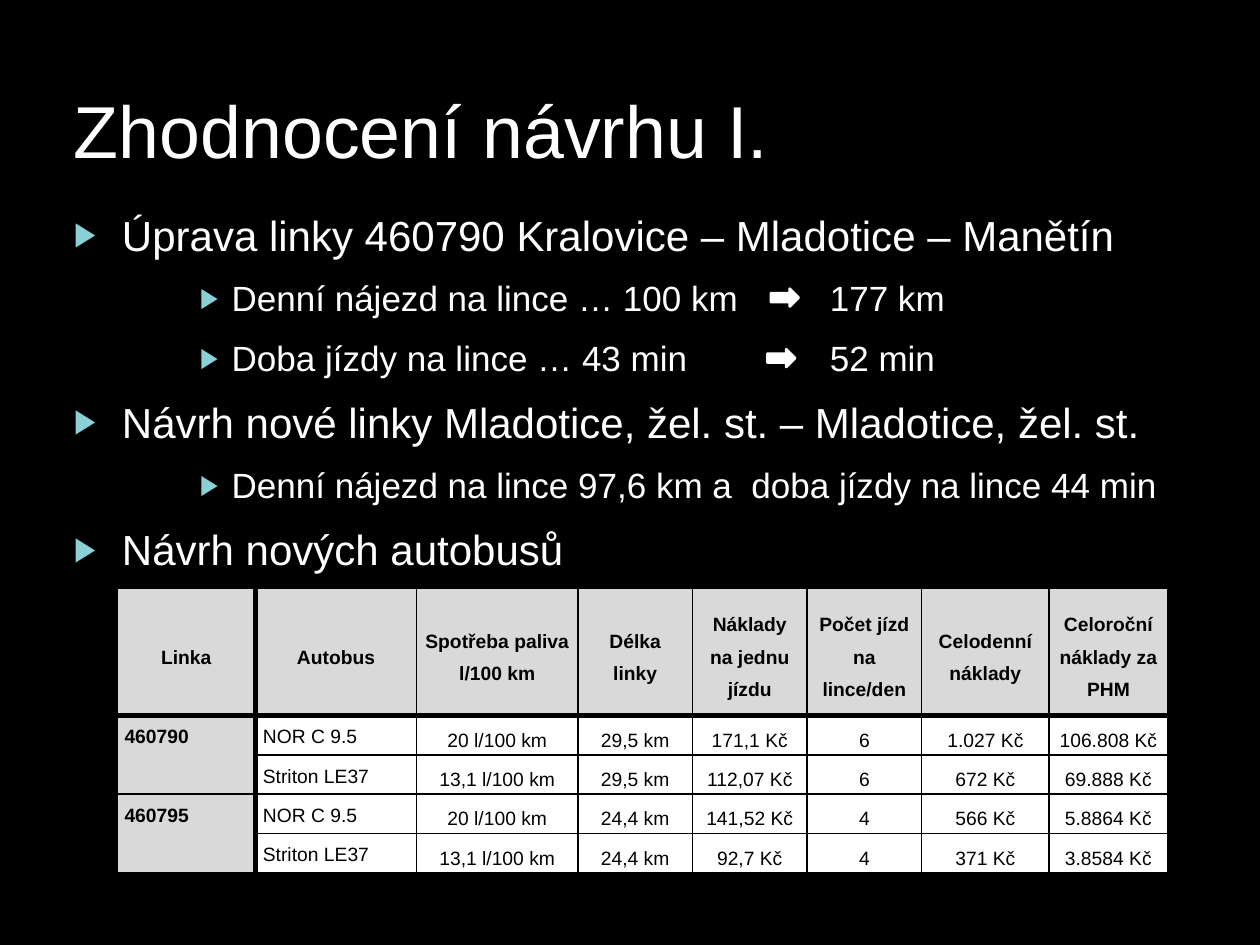
from dataclasses import dataclass

from lxml import etree
from pptx import Presentation
from pptx import util as u
from pptx.dml import color
from pptx.enum import shapes, text
from pptx.oxml import ns

Cm = u.Cm
HUES = {"back": "000000", "ink": "FFFFFF", "mark": "8AD0D6", "head": "D9D9D9", "cell": "FFFFFF", "rule": "000000"}
FONT = "Arial"
TABS = (9.53, 10.8, 12.07, 12.7, 13.97, 15.24)
COLS = (2.79, 3.25, 3.25, 2.31, 2.31, 2.31, 2.57, 2.39)
ROWS = (2.57,) + (0.79,) * 4
DATA = (
    ("Linka", "Autobus", "Spotřeba paliva l/100 km", "Délka linky", "Náklady na jednu jízdu",
     "Počet jízd na lince/den", "Celodenní náklady", "Celoroční náklady za PHM"),
    ("460790", "NOR C 9.5", "20 l/100 km", "29,5 km", "171,1 Kč", "6", "1.027 Kč", "106.808 Kč"),
    ("", "Striton LE37", "13,1 l/100 km", "29,5 km", "112,07 Kč", "6", "672 Kč", "69.888 Kč"),
    ("460795", "NOR C 9.5", "20 l/100 km", "24,4 km", "141,52 Kč", "4", "566 Kč", "5.8864 Kč"),
    ("", "Striton LE37", "13,1 l/100 km", "24,4 km", "92,7 Kč", "4", "371 Kč", "3.8584 Kč"),
)


@dataclass
class Level:
    """Indents in centimetres and text size of an outline level."""
    left: float
    hang: float
    size: int
    depth: int


@dataclass
class Point:
    """A bulleted line."""
    words: str
    level: Level


@dataclass
class Arrow:
    """Corner of a small arrow in centimetres."""
    left: float
    top: float


MAIN = Level(0.97, 0.97, 24, 0)
SUB = Level(3.18, 0.64, 20, 2)
POINTS = (
    Point("Úprava linky 460790 Kralovice – Mladotice – Manětín", MAIN),
    Point("Denní nájezd na lince … 100 km\t\t177 km", SUB),
    Point("Doba jízdy na lince … 43 min\t\t\t52 min", SUB),
    Point("Návrh nové linky Mladotice, žel. st. – Mladotice, žel. st.", MAIN),
    Point("Denní nájezd na lince 97,6 km a  doba jízdy na lince 44 min", SUB),
    Point("Návrh nových autobusů", MAIN),
)
ARROWS = (Arrow(15.54, 5.82), Arrow(15.47, 7.04))


def hue(name: str) -> color.RGBColor:
    """Return a named colour."""
    return color.RGBColor.from_string(HUES[name])


def add(node, tag: str, **attrs):
    """Append a drawing element."""
    return etree.SubElement(node, ns.qn(f"a:{tag}"), {k: str(v) for k, v in attrs.items()})


def style(para, size: int, name: str, bold: bool = False) -> None:
    """Format the runs of a paragraph."""
    for run in para.runs:
        font = run.font
        font.name, font.size, font.bold = FONT, u.Pt(size), bold
        font.color.rgb = hue(name)


def frame(slide, left: float, top: float, width: float, height: float):
    """Add a wrapping text box and return its frame."""
    box = slide.shapes.add_textbox(Cm(left), Cm(top), Cm(width), Cm(height))
    box.text_frame.word_wrap = True
    return box.text_frame


def title(slide) -> None:
    """Draw the heading."""
    body = frame(slide, 1.24, 1.47, 21.16, 2.92)
    body.margin_top = Cm(0.25)
    body.text = "Zhodnocení návrhu I."
    style(body.paragraphs[0], 42, "ink")


def bullet(para, level: Level) -> None:
    """Give a paragraph its indents, mark and tab stops."""
    para.level = level.depth
    props = para._p.get_or_add_pPr()
    props.set("marL", str(Cm(level.left)))
    props.set("indent", str(-Cm(level.hang)))
    add(add(props, "buClr"), "srgbClr", val=HUES["mark"])
    add(props, "buSzPct", val=80000)
    add(props, "buFont", typeface=FONT)
    add(props, "buChar", char="▶")
    if level is SUB:
        stops = add(props, "tabLst")
        for stop in TABS:
            add(stops, "tab", pos=Cm(stop), algn="l")


def outline(slide) -> None:
    """Draw the bulleted lines."""
    body = frame(slide, 1.24, 4.09, 22.89, 10.57)
    for i, point in enumerate(POINTS):
        para = body.add_paragraph() if i else body.paragraphs[0]
        para.text = point.words
        bullet(para, point.level)
        if i:
            para.space_before = u.Pt(10)
        else:
            para.alignment = text.PP_ALIGN.JUSTIFY
        style(para, point.level.size, "ink")


def edges(cell, row: int, col: int) -> None:
    """Rule a cell, thicker beside the header row and column."""
    props = cell._tc.get_or_add_tcPr()
    thick = {"lnL": col == 1, "lnR": col == 0, "lnT": row == 1, "lnB": row == 0}
    for i, (tag, bold) in enumerate(thick.items()):
        line = etree.Element(ns.qn(f"a:{tag}"), w=str(u.Pt(3 if bold else 1)))
        add(add(line, "solidFill"), "srgbClr", val=HUES["rule"])
        props.insert(i, line)


def fill(cell, row: int, col: int) -> None:
    """Write and format one table cell."""
    head = row == 0 or col == 0
    side = row > 0 and col < 2
    cell.margin_left = cell.margin_right = Cm(0.15)
    cell.margin_top = cell.margin_bottom = 0
    cell.vertical_anchor = text.MSO_ANCHOR.TOP if side else text.MSO_ANCHOR.MIDDLE
    cell.fill.solid()
    cell.fill.fore_color.rgb = hue("head" if head else "cell")
    edges(cell, row, col)
    cell.text_frame.text = DATA[row][col]
    para = cell.text_frame.paragraphs[0]
    para.alignment = text.PP_ALIGN.JUSTIFY if side else text.PP_ALIGN.CENTER
    para.line_spacing = 1.5
    para.font.size = u.Pt(11)
    style(para, 11, "rule", head)


def grid(slide) -> None:
    """Draw the cost table."""
    table = slide.shapes.add_table(len(ROWS), len(COLS), Cm(2.36), Cm(11.86), Cm(sum(COLS)), Cm(sum(ROWS))).table
    for col, width in zip(table.columns, COLS):
        col.width = Cm(width)
    for row, height in zip(table.rows, ROWS):
        row.height = Cm(height)
    for r in range(len(ROWS)):
        for c in range(len(COLS)):
            fill(table.cell(r, c), r, c)
    for r in (1, 3):
        table.cell(r, 0).merge(table.cell(r + 1, 0))


def arrow(slide, item: Arrow) -> None:
    """Draw a small right arrow."""
    shape = slide.shapes.add_shape(
        shapes.MSO_SHAPE.RIGHT_ARROW, Cm(item.left), Cm(item.top), Cm(0.56), Cm(0.36))
    shape.shadow.inherit = False
    shape.fill.solid()
    shape.fill.fore_color.rgb = shape.line.color.rgb = hue("ink")
    shape.line.width = u.Pt(1.5)


def main() -> None:
    """Build the slide."""
    deck = Presentation()
    deck.slide_width, deck.slide_height = Cm(25.4), Cm(19.05)
    slide = deck.slides.add_slide(deck.slide_layouts[6])
    slide.background.fill.solid()
    slide.background.fill.fore_color.rgb = hue("back")
    title(slide)
    outline(slide)
    grid(slide)
    for item in ARROWS:
        arrow(slide, item)
    deck.save("out.pptx")


if __name__ == "__main__":
    main()
